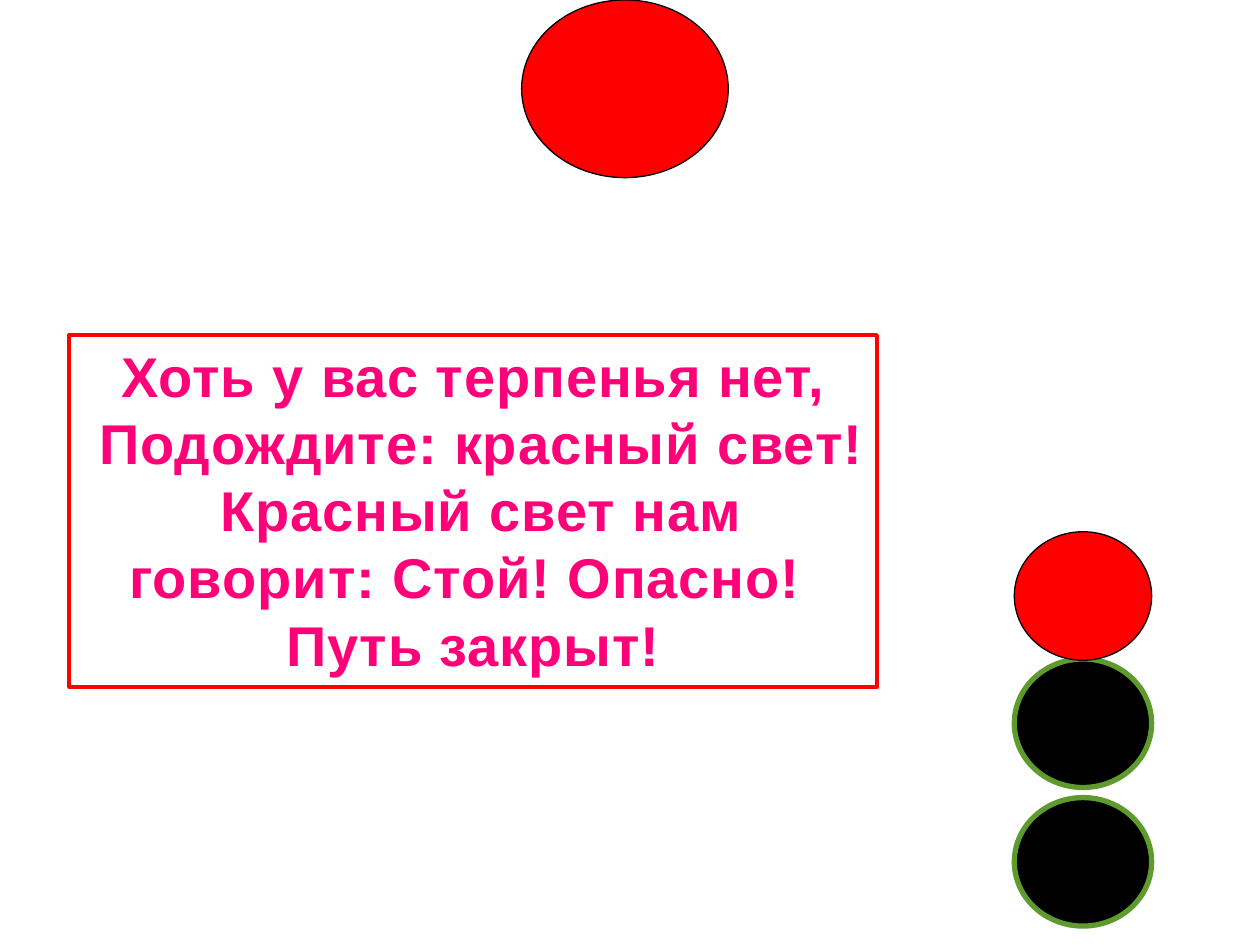
from pptx import Presentation
from pptx.dml.color import RGBColor
from pptx.enum.shapes import MSO_SHAPE
from pptx.enum.text import MSO_ANCHOR, MSO_AUTO_SIZE, PP_ALIGN
from pptx.util import Inches, Pt

RECT, OVAL = MSO_SHAPE.RECTANGLE, MSO_SHAPE.OVAL
LAMP = MSO_SHAPE.FLOWCHART_CONNECTOR
TOP, GROW = MSO_ANCHOR.TOP, MSO_AUTO_SIZE.SHAPE_TO_FIT_TEXT
CENTER = PP_ALIGN.CENTER

RED = RGBColor(0xFF, 0x00, 0x00)
BLACK = RGBColor(0x00, 0x00, 0x00)
GREEN = RGBColor(0x5E, 0x9B, 0x2C)
PINK = RGBColor(0xFF, 0x00, 0x79)

VERSE = [
    "Хоть у вас терпенья нет,",
    " Подождите: красный свет!",
    " Красный свет нам говорит: Стой! Опасно! ",
    "Путь закрыт!",
]

# Traffic light: left edge, lamp size
LEFT, WIDE, HIGH = 8.05, 1.09, 1.02
# Top, kind, fill, line colour, line width of each lamp
LAMPS = [
    (6.33, OVAL, BLACK, GREEN, 3),
    (5.23, OVAL, BLACK, GREEN, 3),
    (4.22, LAMP, RED, BLACK, 0.75),
]


def add_form(slide, kind, box, fill, line, width):
    form = slide.shapes.add_shape(kind, *(Inches(v) for v in box))
    form.shadow.inherit = False
    if fill is None:
        form.fill.background()
    else:
        form.fill.solid()
        form.fill.fore_color.rgb = fill
    form.line.color.rgb = line
    form.line.width = Pt(width)
    return form


def add_verse(slide, box, lines):
    frame = add_form(slide, RECT, box, None, RED, 2.25).text_frame
    frame.word_wrap = True
    frame.auto_size = GROW
    frame.vertical_anchor = TOP
    for i, line in enumerate(lines):
        para = frame.paragraphs[0] if i == 0 else frame.add_paragraph()
        para.alignment = CENTER
        run = para.add_run()
        run.text = line
        font = run.font
        font.name, font.size, font.bold = "Arial", Pt(32), True
        font.color.rgb = PINK
        # Letter spacing of half a point
        font._element.set("spc", "50")


def main():
    deck = Presentation()
    deck.slide_width, deck.slide_height = Inches(10), Inches(7.5)
    slide = deck.slides.add_slide(deck.slide_layouts[6])

    # Framed verse
    add_verse(slide, (0.55, 2.66, 6.41, 2.79), VERSE)

    # Traffic light, from the bottom up
    for top, kind, fill, line, width in LAMPS:
        add_form(slide, kind, (LEFT, top, WIDE, HIGH), fill, line, width)

    # Large red signal
    add_form(slide, LAMP, (4.14, 0, 1.64, 1.41), RED, BLACK, 0.75)

    deck.save("out.pptx")


if __name__ == "__main__":
    main()
